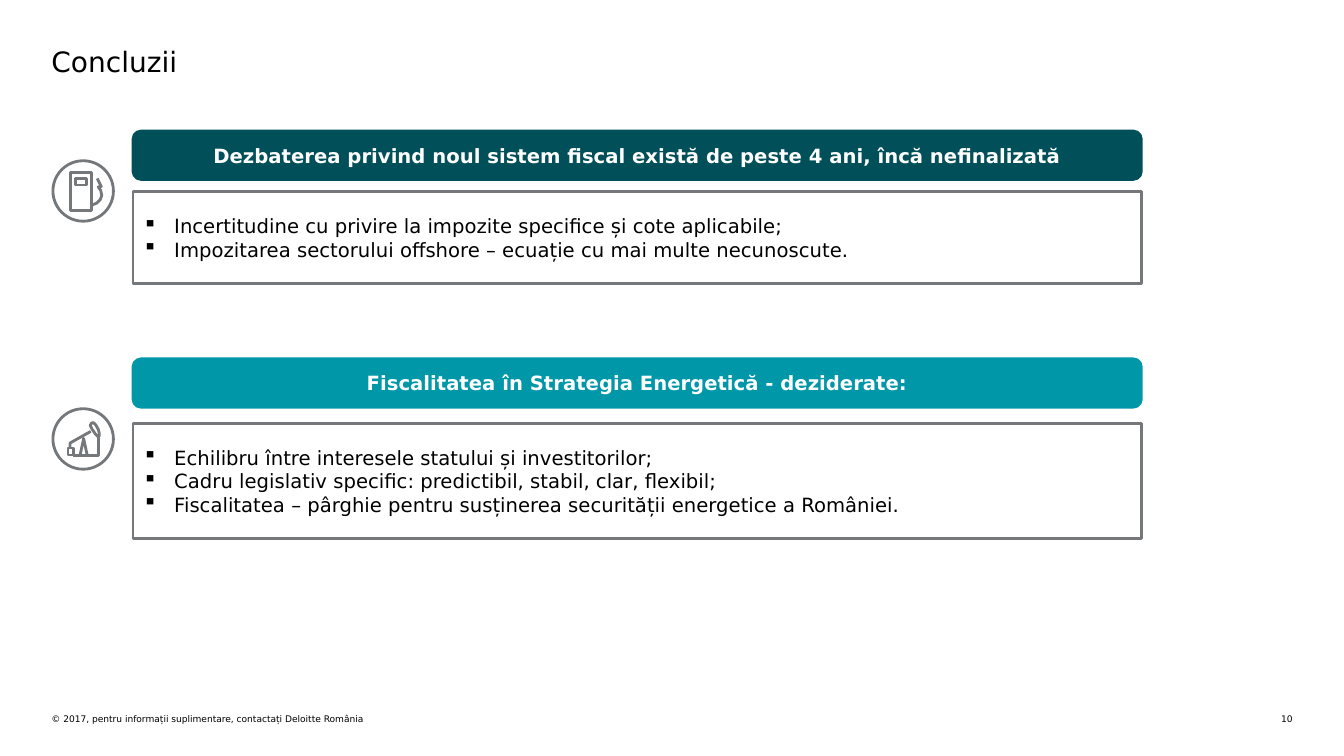
from lxml.etree import SubElement
from pptx import Presentation
from pptx.dml.color import RGBColor
from pptx.enum.shapes import MSO_SHAPE
from pptx.enum.text import MSO_ANCHOR, PP_ALIGN
from pptx.oxml.ns import qn
from pptx.util import Inches, Pt

BLACK = RGBColor(0x00, 0x00, 0x00)
WHITE = RGBColor(0xFF, 0xFF, 0xFF)
GRAY = RGBColor(0x75, 0x78, 0x7B)
DEEP_TEAL = RGBColor(0x00, 0x4F, 0x59)
TEAL = RGBColor(0x00, 0x97, 0xA9)

FONT = "DejaVu Sans"
SLIDE_WIDTH, SLIDE_HEIGHT = 13.33, 7.5
MARGIN = 0.51
CONTENT_WIDTH = SLIDE_WIDTH - 2 * MARGIN
PANEL_LEFT, PANEL_WIDTH = 1.32, 10
HEADING_HEIGHT = 0.48
ICON_SIZE, STROKE = 0.63, 0.03
BULLET_INDENT = 0.31
UNITS_PER_INCH = 1000

FUEL_PUMP = [
    ([(190, 135), (400, 135), (400, 505), (190, 505)], True),
    ([(240, 190), (345, 190), (345, 255), (240, 255)], True),
    ([(455, 190), (495, 270), (465, 275), (490, 310), (500, 360),
      (485, 400), (450, 435), (400, 455)], False),
]
OIL_PUMP = [
    ([(165, 405), (215, 405), (215, 475), (165, 475)], True),
    ([(215, 475), (465, 475), (465, 300)], False),
    ([(185, 405), (185, 355), (390, 240)], False),
    ([(285, 475), (320, 310), (355, 475)], False),
    ([(385, 180), (400, 155), (420, 155), (440, 175), (465, 220), (475, 260),
      (475, 285), (460, 290), (440, 270), (405, 220)], True),
]

SECTIONS = [
    dict(
        heading="Dezbaterea privind noul sistem fiscal există de peste 4 ani, încă nefinalizată",
        points=["Incertitudine cu privire la impozite specifice și cote aplicabile;",
                "Impozitarea sectorului offshore – ecuație cu mai multe necunoscute."],
        color=DEEP_TEAL, top=1.3, body_top=1.9, body_height=0.91,
        icon=FUEL_PUMP, icon_top=1.58),
    dict(
        heading="Fiscalitatea în Strategia Energetică - deziderate:",
        points=["Echilibru între interesele statului și investitorilor;",
                "Cadru legislativ specific: predictibil, stabil, clar, flexibil;",
                "Fiscalitatea – pârghie pentru susținerea securității energetice a României."],
        color=TEAL, top=3.56, body_top=4.2, body_height=1.14,
        icon=OIL_PUMP, icon_top=4.04),
]


def write_text(holder, lines, size=14, color=BLACK, bold=False, align=PP_ALIGN.LEFT,
               anchor=MSO_ANCHOR.TOP, inset=0, bulleted=False):
    """Fill a shape with formatted paragraphs."""
    frame = holder.text_frame
    frame.word_wrap = True
    frame.vertical_anchor = anchor
    frame.margin_left = frame.margin_right = Inches(inset)
    frame.margin_top = frame.margin_bottom = Inches(inset)
    for index, line in enumerate(lines):
        paragraph = frame.paragraphs[0] if index == 0 else frame.add_paragraph()
        paragraph.alignment = align
        if bulleted:
            properties = paragraph._p.get_or_add_pPr()
            properties.set("marL", str(Inches(BULLET_INDENT)))
            properties.set("indent", str(-Inches(BULLET_INDENT)))
            SubElement(properties, qn("a:buChar")).set("char", "▪")
        run = paragraph.add_run()
        run.text = line
        run.font.name = FONT
        run.font.size = Pt(size)
        run.font.bold = bold
        run.font.color.rgb = color


def style_outline(shape, line_color, fill_color=None):
    """Give a shape its line, its fill if any, and no shadow."""
    shape.shadow.inherit = False
    shape.line.color.rgb = line_color
    shape.line.width = Pt(2)
    if fill_color is None:
        shape.fill.background()
    else:
        shape.fill.solid()
        shape.fill.fore_color.rgb = fill_color


def add_panel(slide, preset, top, height, line_color, fill_color):
    """Add one box in the panel column."""
    panel = slide.shapes.add_shape(preset, Inches(PANEL_LEFT), Inches(top),
                                   Inches(PANEL_WIDTH), Inches(height))
    style_outline(panel, line_color, fill_color)
    return panel


def add_icon(slide, strokes, left, top):
    """Draw a ring with line art inside it."""
    diameter = ICON_SIZE - STROKE
    ring = slide.shapes.add_shape(MSO_SHAPE.OVAL, Inches(left + STROKE / 2),
                                  Inches(top + STROKE / 2),
                                  Inches(diameter), Inches(diameter))
    style_outline(ring, GRAY)
    for points, closed in strokes:
        builder = slide.shapes.build_freeform(*points[0], scale=Inches(1) / UNITS_PER_INCH)
        builder.add_line_segments(points[1:], close=closed)
        style_outline(builder.convert_to_shape(Inches(left), Inches(top)), GRAY)


def add_section(slide, heading, points, color, top, body_top, body_height, icon, icon_top):
    """Add a heading bar, its bulleted box and its icon."""
    heading_bar = add_panel(slide, MSO_SHAPE.ROUNDED_RECTANGLE, top, HEADING_HEIGHT,
                            color, color)
    write_text(heading_bar, [heading], color=WHITE, bold=True, align=PP_ALIGN.CENTER,
               anchor=MSO_ANCHOR.MIDDLE, inset=0.1)
    body = add_panel(slide, MSO_SHAPE.RECTANGLE, body_top, body_height, GRAY, WHITE)
    write_text(body, points, anchor=MSO_ANCHOR.MIDDLE, inset=0.1, bulleted=True)
    add_icon(slide, icon, MARGIN, icon_top)


def add_title(slide, text):
    """Place and format the slide title."""
    title = slide.shapes.title
    title.left, title.top = Inches(MARGIN), Inches(0.44)
    title.width, title.height = Inches(CONTENT_WIDTH), Inches(0.37)
    write_text(title, [text], size=20)


def add_footer(slide, copyright_line, page):
    """Add the copyright line and the page number."""
    page_width = 0.34
    page_left = SLIDE_WIDTH - MARGIN - page_width
    for text, left, width, align in (
            (copyright_line, MARGIN, 5.86, PP_ALIGN.LEFT),
            (page, page_left, page_width, PP_ALIGN.RIGHT)):
        note = slide.shapes.add_textbox(Inches(left), Inches(7.08), Inches(width), Inches(0.11))
        write_text(note, [text], size=6.5, align=align)


def main():
    """Build the conclusions slide."""
    presentation = Presentation()
    presentation.slide_width = Inches(SLIDE_WIDTH)
    presentation.slide_height = Inches(SLIDE_HEIGHT)
    slide = presentation.slides.add_slide(presentation.slide_layouts[5])
    add_title(slide, "Concluzii")
    for section in SECTIONS:
        add_section(slide, **section)
    add_footer(slide, "© 2017, pentru informații suplimentare, contactați Deloitte România", "10")
    presentation.save("out.pptx")


if __name__ == "__main__":
    main()
